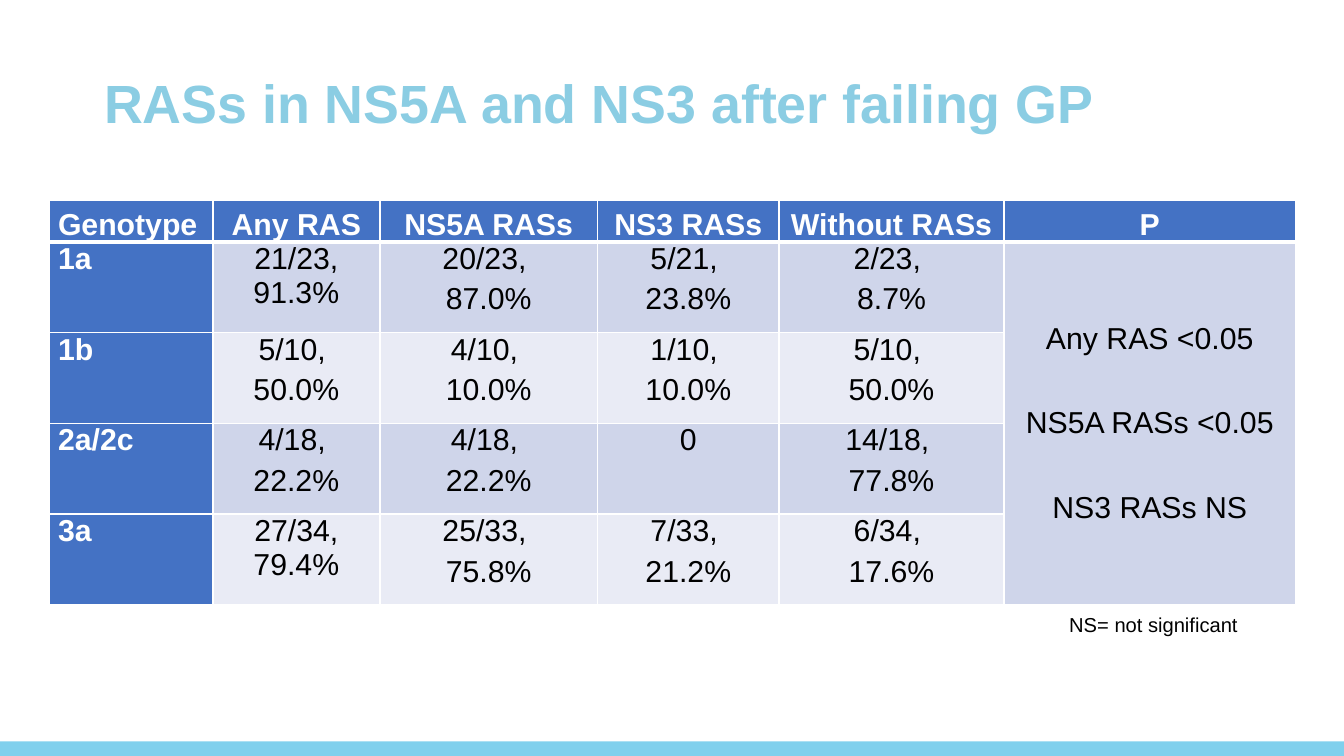
from dataclasses import dataclass

from lxml.etree import SubElement
from pptx import Presentation
from pptx.dml.color import RGBColor
from pptx.enum.shapes import MSO_SHAPE
from pptx.enum.text import MSO_ANCHOR, MSO_AUTO_SIZE, PP_ALIGN
from pptx.oxml import parse_xml
from pptx.oxml.ns import nsdecls, qn
from pptx.util import Inches, Pt


@dataclass(frozen=True)
class Theme:
    """Colours and type sizes of the slide."""
    font: str = "Arial"
    title: str = "8BCDE3"
    bar: str = "54C0E8"
    head: str = "4472C4"
    bands: tuple = ("CFD5EA", "E9EBF5")
    light: str = "FFFFFF"
    dark: str = "000000"
    large: int = 32
    body: int = 18
    small: int = 12


THEME = Theme()
WIDTH, HEIGHT = Inches(11.11), Inches(6.25)
COLS = (1.35, 1.38, 1.8, 1.5, 1.86, 2.41)
ROWS = (0.34, 0.75, 0.75, 0.75, 0.75)
HEADS = ("Genotype", "Any RAS", "NS5A RASs", "NS3 RASs", "Without RASs", "P")
DATA = (
    ("1a", "21/23, 91.3%", "20/23, \n87.0%", "5/21, \n23.8%", "2/23, \n8.7%"),
    ("1b", "5/10, \n50.0%", "4/10, \n10.0%", "1/10, \n10.0%", "5/10, \n50.0%"),
    ("2a/2c", "4/18, \n22.2%", "4/18, \n22.2%", "0", "14/18, \n77.8%"),
    ("3a", "27/34, 79.4%", "25/33, \n75.8%", "7/33, \n21.2%", "6/34, \n17.6%"),
)
TESTS = "Any RAS <0.05\nNS5A RASs <0.05\nNS3 RASs NS"


def area(left, top, width, height):
    """Turn percentages of the slide into a box."""
    return tuple(int(side * part / 100) for side, part in
                 zip((WIDTH, HEIGHT) * 2, (left, top, width, height)))


def style(para, size, color, bold=False, align=PP_ALIGN.LEFT):
    """Set the look of one paragraph."""
    font = para.font
    font.name, font.size, font.bold = THEME.font, Pt(size), bold
    font.color.rgb = RGBColor.from_string(color)
    para.alignment = align


def paint(fill, color):
    """Give a solid fill."""
    fill.solid()
    fill.fore_color.rgb = RGBColor.from_string(color)


def edge(cell, row):
    """Draw white cell borders, thick under the header."""
    props = cell._tc.get_or_add_tcPr()
    thick = {"T": row == 1, "B": row == 0}
    for spot, side in enumerate("LRTB"):
        width = Pt(3 if thick.get(side) else 1)
        props.insert(spot, parse_xml(
            f'<a:ln{side} {nsdecls("a")} w="{width}"><a:solidFill>'
            f'<a:srgbClr val="{THEME.light}"/></a:solidFill></a:ln{side}>'))


def write(cell, text, row, col, gap=2):
    """Fill and format one table cell."""
    lead = row == 0 or col == 0
    cell.margin_left = cell.margin_right = Inches(0.07)
    cell.margin_top = cell.margin_bottom = 0
    cell.vertical_anchor = MSO_ANCHOR.BOTTOM if row == 0 else MSO_ANCHOR.TOP
    cell.text = text
    for spot, para in enumerate(cell.text_frame.paragraphs):
        style(para, THEME.body, THEME.light if lead else THEME.dark, lead,
              PP_ALIGN.CENTER if col else PP_ALIGN.LEFT)
        para.space_before = Pt(gap if spot else 2)
        para.space_after = Pt(2)
    paint(cell.fill, THEME.head if lead else THEME.bands[(row - 1) % 2])
    edge(cell, row)


def add_bar(slide, box):
    """Add the translucent band at the foot."""
    bar = slide.shapes.add_shape(MSO_SHAPE.RECTANGLE, *box)
    bar.shadow.inherit = False
    paint(bar.fill, THEME.bar)
    bar.line.fill.background()
    color = next(bar._element.spPr.iter(qn("a:srgbClr")))
    SubElement(color, qn("a:alpha"), val="74000")


def add_title(slide, box):
    """Place and format the title."""
    title = slide.shapes.title
    title.left, title.top, title.width, title.height = box
    frame = title.text_frame
    frame.text = "RASs in NS5A and NS3 after failing GP"
    frame.auto_size = MSO_AUTO_SIZE.NONE
    frame.vertical_anchor = MSO_ANCHOR.MIDDLE
    para = frame.paragraphs[0]
    style(para, THEME.large, THEME.title, True)
    para.line_spacing = 0.9


def add_grid(slide, box):
    """Add the table of genotypes."""
    table = slide.shapes.add_table(len(ROWS), len(COLS), *box).table
    table.horz_banding = False
    for col, part in zip(table.columns, COLS):
        col.width = int(box[2] * part / sum(COLS))
    for row, part in zip(table.rows, ROWS):
        row.height = int(box[3] * part / sum(ROWS))
    for row, texts in enumerate((HEADS,) + DATA):
        for col, text in enumerate(texts):
            write(table.cell(row, col), text, row, col)
    last = len(COLS) - 1
    tests = table.cell(1, last)
    tests.merge(table.cell(len(DATA), last))
    write(tests, TESTS, 1, last, gap=28)
    tests.vertical_anchor = MSO_ANCHOR.MIDDLE


def add_note(slide, box):
    """Add the key below the table."""
    frame = slide.shapes.add_textbox(*box).text_frame
    frame.word_wrap = False
    frame.auto_size = MSO_AUTO_SIZE.SHAPE_TO_FIT_TEXT
    frame.text = "NS= not significant"
    style(frame.paragraphs[0], THEME.small, THEME.dark)


def main():
    """Build and save the slide."""
    prs = Presentation()
    prs.slide_width, prs.slide_height = WIDTH, HEIGHT
    slide = prs.slides.add_slide(prs.slide_layouts[5])
    add_bar(slide, area(0, 98.08, 100, 1.92))
    add_title(slide, area(6.84, 3.68, 86.32, 20.8))
    add_grid(slide, area(3.69, 26.56, 92.71, 53.44))
    add_note(slide, area(78.67, 80.16, 14.49, 4.8))
    prs.save("out.pptx")


if __name__ == "__main__":
    main()
